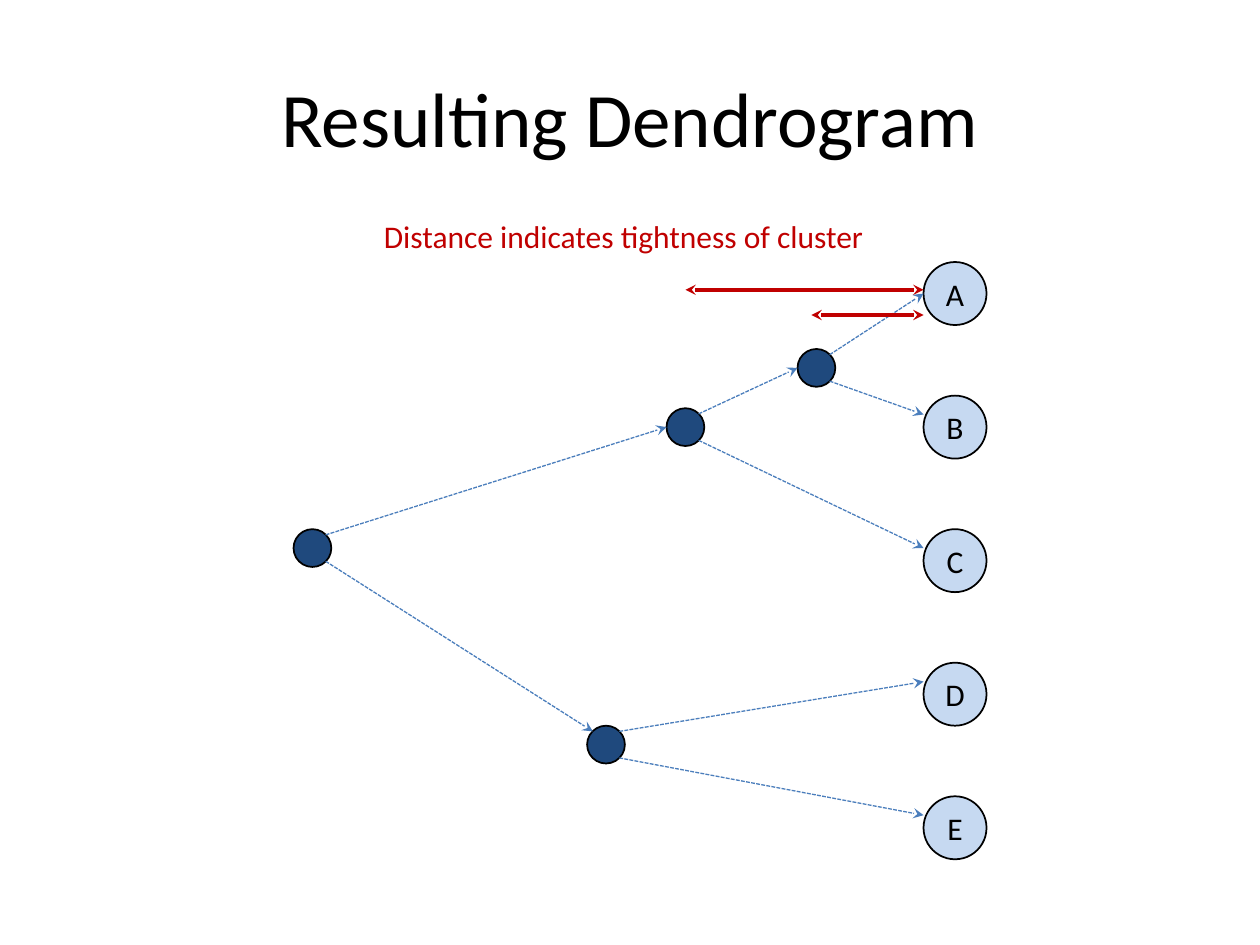
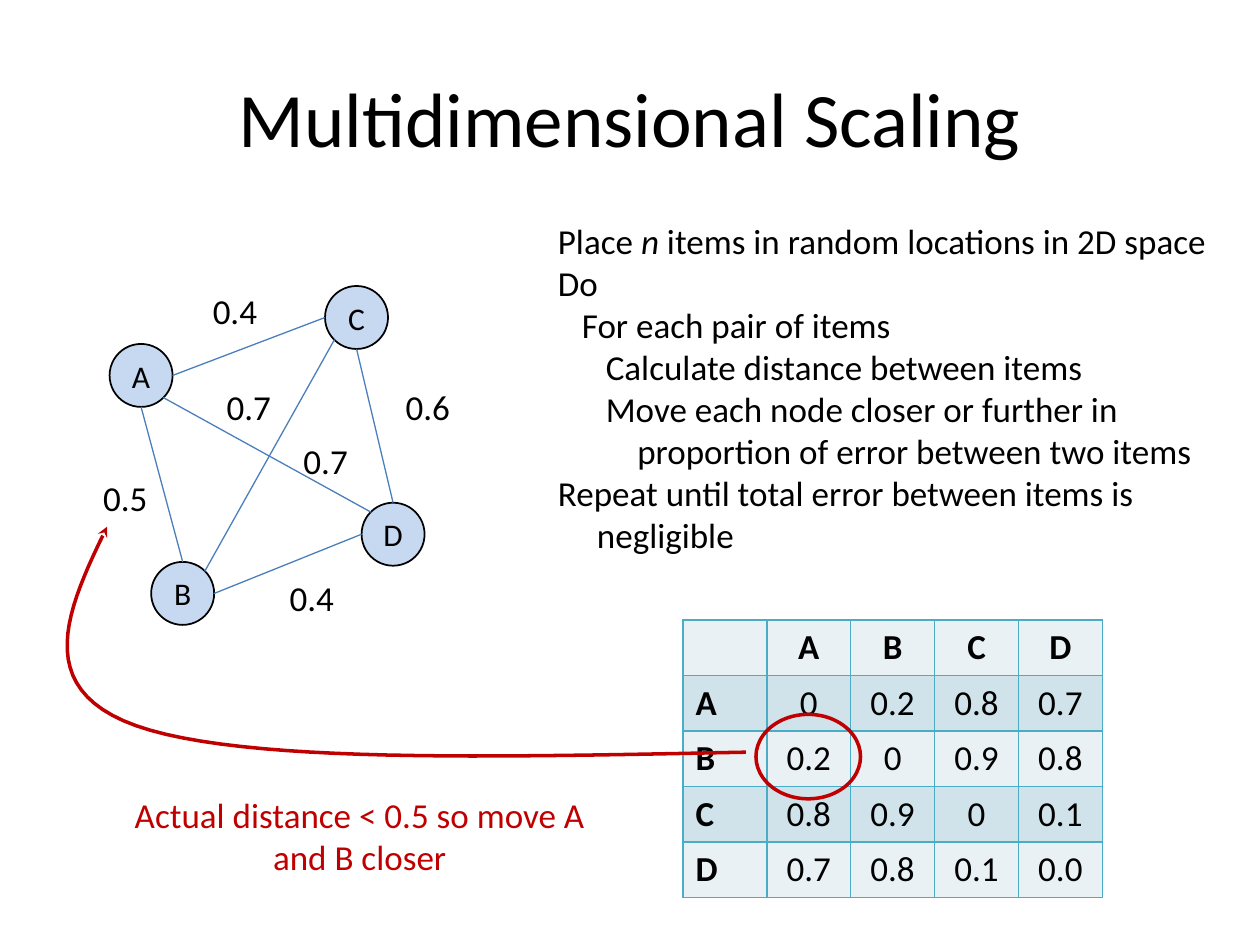
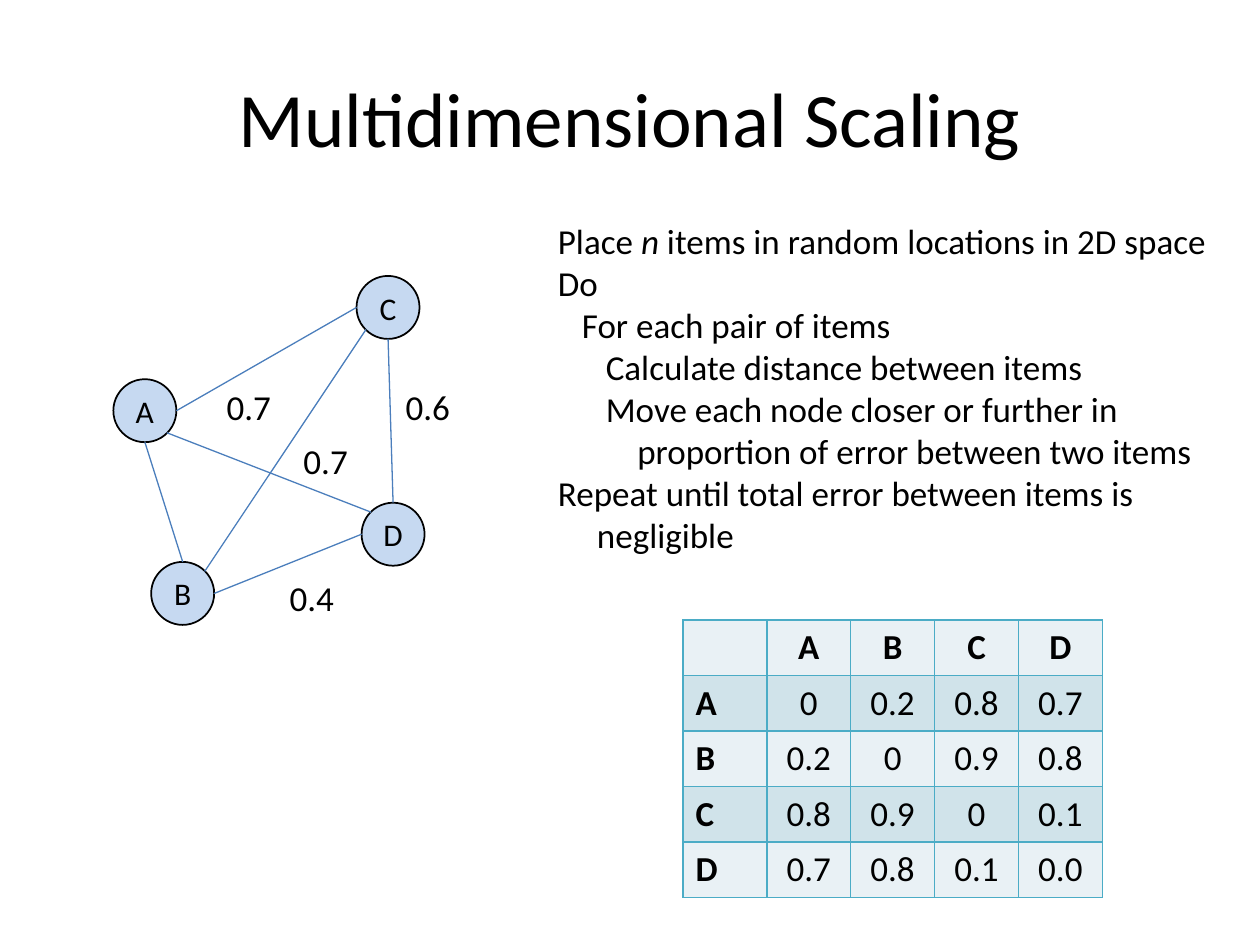
from lxml import etree
from pptx import Presentation
from pptx.dml.color import RGBColor
from pptx.enum import dml, shapes, text
from pptx.oxml import ns
from pptx.util import Inches, Pt

BLACK = RGBColor(0x00, 0x00, 0x00)
RED = RGBColor(0xC0, 0x00, 0x00)
PALE_BLUE = RGBColor(0xC6, 0xD9, 0xF1)
NAVY = RGBColor(0x1F, 0x49, 0x7D)
EDGE_BLUE = RGBColor(0x4B, 0x7E, 0xBC)
BAND_LIGHT = RGBColor(0xE9, 0xF1, 0xF5)
BAND_DARK = RGBColor(0xD0, 0xE3, 0xEA)
GRID = RGBColor(0x4B, 0xAC, 0xC6)
FONT = "Calibri"
CENTER, LEFT = text.PP_ALIGN.CENTER, text.PP_ALIGN.LEFT
OVAL, STRAIGHT = shapes.MSO_SHAPE.OVAL, shapes.MSO_CONNECTOR.STRAIGHT
ITEM_SIZE, CLUSTER_SIZE = 0.5, 0.3

# Points on a circle, as fractions of its box
SITES = {"t": (0.5, 0), "l": (0, 0.5), "b": (0.5, 1), "r": (1, 0.5),
         "tl": (0.15, 0.15), "tr": (0.85, 0.15), "bl": (0.15, 0.85),
         "br": (0.85, 0.85), "upper l": (0, 0.3)}


def write(p, words, size=20, color=BLACK, bold=False, align=CENTER, indent=0):
    """Fill a paragraph; parts between asterisks are italic."""
    p.alignment = align
    if indent:
        pPr = p._p.get_or_add_pPr()
        pPr.set("marL", str(Inches(indent)))
        pPr.set("indent", "0")
    for i, part in enumerate(words.split("*")):
        r = p.add_run()
        r.text = part
        r.font.name, r.font.size = FONT, Pt(size)
        r.font.bold, r.font.italic = bold, i % 2 == 1
        r.font.color.rgb = color


def stroke(sp, color, width, dash=None, arrows=()):
    """Set the outline and arrowheads, and remove the shadow."""
    sp.line.color.rgb = color
    sp.line.width = Pt(width)
    if dash:
        sp.line.dash_style = dash
    spPr = sp._element.spPr
    for end in arrows:
        etree.SubElement(spPr.find(ns.qn("a:ln")), ns.qn(f"a:{end}"), type="stealth")
    etree.SubElement(spPr, ns.qn("a:effectLst"))


dendrogram_nodes = {name: (7.33, 2.08 + 1.06 * i) for i, name in enumerate("ABCDE")}
dendrogram_nodes.update({"root": (2.33, 4.2), "AB": (6.33, 2.77),
                         "ABC": (5.29, 3.24), "DE": (4.66, 5.76)})
dendrogram_edges = [
    ("root", "tr", "ABC", "l"), ("root", "br", "DE", "tl"),
    ("AB", "tr", "A", "l"), ("AB", "br", "B", "upper l"),
    ("ABC", "tr", "AB", "l"), ("ABC", "br", "C", "upper l"),
    ("DE", "tr", "D", "upper l"), ("DE", "br", "E", "upper l"),
]
before_nodes = {"A": (0.87, 2.73), "B": (1.2, 4.46), "C": (2.58, 2.27), "D": (2.87, 3.99)}
after_nodes = {**before_nodes, "A": (0.9, 3.01), "C": (2.83, 2.19)}
scaling_edges = [
    ("A", "b", "B", "t"), ("A", "r", "C", "l"), ("A", "br", "D", "tl"),
    ("C", "b", "D", "t"), ("C", "bl", "B", "tr"), ("D", "l", "B", "r"),
]
after_labels = [("0.4", 2.06, 4.53), ("0.6", 2.98, 3.01),
                ("0.7", 1.56, 3.01), ("0.7", 2.17, 3.44)]
before_labels = [("0.4", 1.45, 2.25), ("0.5", 0.58, 3.73)] + after_labels
algorithm = [
    ("Place *n* items in random locations in 2D space", 0),
    ("Do", 0),
    ("For each pair of items", 0.19),
    ("Calculate distance between items", 0.38),
    ("Move each node closer or further in", 0.38),
    ("proportion of error between two items", 0.63),
    ("Repeat until total error between items is", 0),
    ("negligible", 0.31),
]
distances = [
    ["", "A", "B", "C", "D"],
    ["A", "0", "0.2", "0.8", "0.7"],
    ["B", "0.2", "0", "0.9", "0.8"],
    ["C", "0.8", "0.9", "0", "0.1"],
    ["D", "0.7", "0.8", "0.1", "0.0"],
]

# Per slide: title, nodes, edges, edge style, text boxes (words, x, y, w, h, size, colour)
slides = [
    ("Resulting Dendrogram", dendrogram_nodes, dendrogram_edges,
     {"dash": dml.MSO_LINE.SQUARE_DOT, "arrows": ["tailEnd"]},
     [("Distance indicates tightness of cluster", 2.48, 1.67, 4.94, 0.4, 18, RED)]),
    ("Multidimensional Scaling", before_nodes, scaling_edges, {},
     [(*label, 0.83, 0.44, 20, BLACK) for label in before_labels]
     + [("Actual distance < 0.5 so move A and B closer", 0.87, 6.25, 3.97, 0.77, 20, RED)]),
    ("Multidimensional Scaling", after_nodes, scaling_edges, {},
     [(*label, 0.83, 0.44, 20, BLACK) for label in after_labels]),
]

prs = Presentation()
prs.slide_width, prs.slide_height = Inches(10), Inches(7.5)

for title, nodes, edges, edge_style, boxes in slides:
    s = prs.slides.add_slide(prs.slide_layouts[5])
    sp = s.shapes.title
    sp.left, sp.top, sp.width, sp.height = map(Inches, (0.5, 0.3, 9, 1.25))
    sp.text_frame.vertical_anchor = text.MSO_ANCHOR.MIDDLE
    write(sp.text_frame.paragraphs[0], title, size=44)

    if edges is scaling_edges:
        table = s.shapes.add_table(5, 5, Inches(5.42), Inches(4.92),
                                   Inches(3.33), Inches(2.17)).table
        table.first_row = table.horz_banding = False
        for i, row in enumerate(distances):
            for j, value in enumerate(row):
                cell = table.cell(i, j)
                cell.fill.solid()
                cell.fill.fore_color.rgb = BAND_DARK if i % 2 else BAND_LIGHT
                write(cell.text_frame.paragraphs[0], value, bold=i == 0 or j == 0,
                      align=CENTER if j else LEFT)
                for k, side in enumerate(("lnL", "lnR", "lnT", "lnB")):
                    ln = etree.Element(ns.qn(f"a:{side}"), w=str(Pt(1)))
                    fill = etree.SubElement(ln, ns.qn("a:solidFill"))
                    etree.SubElement(fill, ns.qn("a:srgbClr"), val=str(GRID))
                    cell._tc.tcPr.insert(k, ln)

        tf = s.shapes.add_textbox(Inches(4.33), Inches(1.69),
                                  Inches(5.5), Inches(2.79)).text_frame
        tf.word_wrap = True
        for i, (step, indent) in enumerate(algorithm):
            p = tf.add_paragraph() if i else tf.paragraphs[0]
            write(p, step, align=LEFT, indent=indent)

    sizes = {name: ITEM_SIZE if len(name) == 1 else CLUSTER_SIZE for name in nodes}
    for name, (x, y) in nodes.items():
        is_item = len(name) == 1
        d = Inches(sizes[name])
        sp = s.shapes.add_shape(OVAL, Inches(x), Inches(y), d, d)
        sp.fill.solid()
        sp.fill.fore_color.rgb = PALE_BLUE if is_item else NAVY
        stroke(sp, BLACK, 1)
        if is_item:
            tf = sp.text_frame
            tf.margin_left = tf.margin_right = tf.margin_top = tf.margin_bottom = 0
            tf.vertical_anchor = text.MSO_ANCHOR.MIDDLE
            write(tf.paragraphs[0], name, size=18)

    for start, start_site, end, end_site in edges:
        ends = [Inches(nodes[name][axis] + sizes[name] * SITES[site][axis])
                for name, site in ((start, start_site), (end, end_site))
                for axis in (0, 1)]
        stroke(s.shapes.add_connector(STRAIGHT, *ends), EDGE_BLUE, 0.75, **edge_style)

    for words, x, y, w, h, size, color in boxes:
        tf = s.shapes.add_textbox(Inches(x), Inches(y), Inches(w), Inches(h)).text_frame
        tf.word_wrap = True
        write(tf.paragraphs[0], words, size=size, color=color)

# Cluster distances on the dendrogram
for x, y in ((5.44, 2.3), (6.44, 2.5)):
    arrow = prs.slides[0].shapes.add_connector(
        STRAIGHT, Inches(x), Inches(y), Inches(7.33), Inches(y))
    stroke(arrow, RED, 2, arrows=["headEnd", "tailEnd"])

# Ring around the A-B distance and a curved arrow to its edge label
s = prs.slides[1]
ring = s.shapes.add_shape(OVAL, Inches(6), Inches(5.67), Inches(0.83), Inches(0.67))
ring.fill.background()
stroke(ring, RED, 2)

curves = [((5.92, 5.97), (3.92, 6.01), (1.93, 6.06), (1.08, 5.76)),
          ((1.08, 5.76), (0.24, 5.46), (0.54, 4.82), (0.85, 4.18))]
STEPS = 24
points = []
for a, b, c, d in curves:
    for t in (n / STEPS for n in range(1, STEPS + 1)):
        points.append([Inches((1 - t) ** 3 * a[k] + 3 * (1 - t) ** 2 * t * b[k]
                              + 3 * (1 - t) * t ** 2 * c[k] + t ** 3 * d[k])
                       for k in (0, 1)])
start_x, start_y = curves[0][0]
builder = s.shapes.build_freeform(Inches(start_x), Inches(start_y))
builder.add_line_segments(points, close=False)
arrow = builder.convert_to_shape()
arrow.fill.background()
stroke(arrow, RED, 2, arrows=["tailEnd"])

prs.save("out.pptx")
